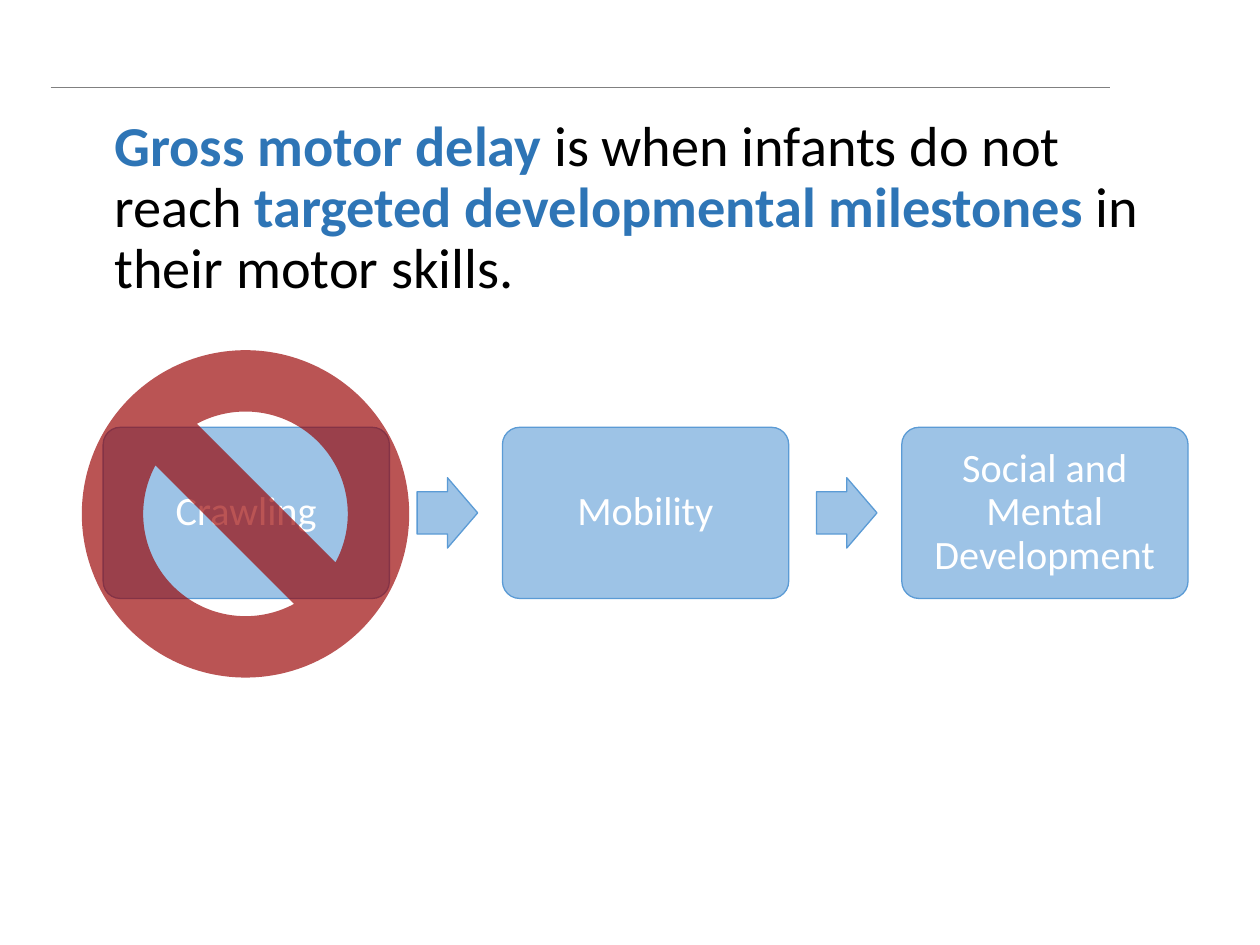
from lxml.etree import SubElement
from pptx import Presentation
from pptx.dml.color import RGBColor
from pptx.enum.shapes import MSO_CONNECTOR, MSO_SHAPE
from pptx.enum.text import MSO_ANCHOR, PP_ALIGN
from pptx.oxml.ns import qn
from pptx.util import Cm, Pt

COLORS = {
    "rule": "808080",
    "step": "9DC3E6",
    "step line": "5B9BD5",
    "step text": "FFFFFF",
    "stop sign": "990000",
    "emphasis": "2E75B6",
    "body": "000000",
}


def color(name):
    return RGBColor.from_string(COLORS[name])


def add_run(paragraph, text, size, color_name, bold=False):
    run = paragraph.add_run()
    run.text = text
    run.font.name = "Calibri"
    run.font.size = Pt(size)
    run.font.bold = bold
    run.font.color.rgb = color(color_name)


presentation = Presentation()
presentation.slide_width = Cm(25.4)
presentation.slide_height = Cm(19.05)
slide = presentation.slides.add_slide(presentation.slide_layouts[6])

# Rule across the top
rule = slide.shapes.add_connector(
    MSO_CONNECTOR.STRAIGHT, Cm(1.02), Cm(1.75), Cm(22.38), Cm(1.75))
rule.line.color.rgb = color("rule")
rule.line.width = Pt(0.25)
SubElement(rule._element.spPr, qn("a:effectLst"))

# Three steps, with an arrow after each but the last
steps = ["Crawling", "Mobility", "Social and Mental Development"]
step_left, step_pitch, middle = 2.08, 8.05, 10.34
step_width, step_height = 5.77, 3.45
arrow_offset, arrow_width, arrow_height = 6.33, 1.22, 1.42

for index, label in enumerate(steps):
    left = step_left + index * step_pitch
    box = slide.shapes.add_shape(
        MSO_SHAPE.ROUNDED_RECTANGLE, Cm(left), Cm(middle - step_height / 2),
        Cm(step_width), Cm(step_height))
    box.adjustments[0] = 0.1
    flow_shapes = [box]

    frame = box.text_frame
    frame.word_wrap = True
    frame.vertical_anchor = MSO_ANCHOR.MIDDLE
    frame.margin_left = frame.margin_right = Cm(0.25)
    frame.margin_top = frame.margin_bottom = Cm(0.25)
    paragraph = frame.paragraphs[0]
    paragraph.alignment = PP_ALIGN.CENTER
    paragraph.line_spacing = 0.9
    add_run(paragraph, label, 23, "step text")

    if index < len(steps) - 1:
        arrow = slide.shapes.add_shape(
            MSO_SHAPE.RIGHT_ARROW, Cm(left + arrow_offset),
            Cm(middle - arrow_height / 2), Cm(arrow_width), Cm(arrow_height))
        arrow.adjustments[0] = 0.6
        arrow.adjustments[1] = 0.5
        flow_shapes.append(arrow)

    for shape in flow_shapes:
        shape.shadow.inherit = False
        shape.fill.solid()
        shape.fill.fore_color.rgb = color("step")
        shape.line.color.rgb = color("step line")
        shape.line.width = Pt(0.75)

# Translucent stop sign over the first step
stop_sign = slide.shapes.add_shape(
    MSO_SHAPE.NO_SYMBOL, Cm(1.65), Cm(7.06), Cm(6.6), Cm(6.6))
stop_sign.shadow.inherit = False
stop_sign.fill.solid()
stop_sign.fill.fore_color.rgb = color("stop sign")
stop_sign.line.fill.background()
sign_color = stop_sign._element.spPr.find(qn("a:solidFill")).find(qn("a:srgbClr"))
SubElement(sign_color, qn("a:alpha"), val="67000")

# Definition
definition = slide.shapes.add_textbox(Cm(2.06), Cm(1.85), Cm(21.13), Cm(4.75))
frame = definition.text_frame
frame.word_wrap = True
frame.vertical_anchor = MSO_ANCHOR.MIDDLE
paragraph = frame.paragraphs[0]
paragraph.line_spacing = 0.9
for text, emphasized in [
    ("Gross motor delay ", True),
    ("is when infants do not reach ", False),
    ("targeted developmental milestones ", True),
    ("in their motor skills.", False),
]:
    add_run(paragraph, text, 32.2, "emphasis" if emphasized else "body", emphasized)

presentation.save("out.pptx")
